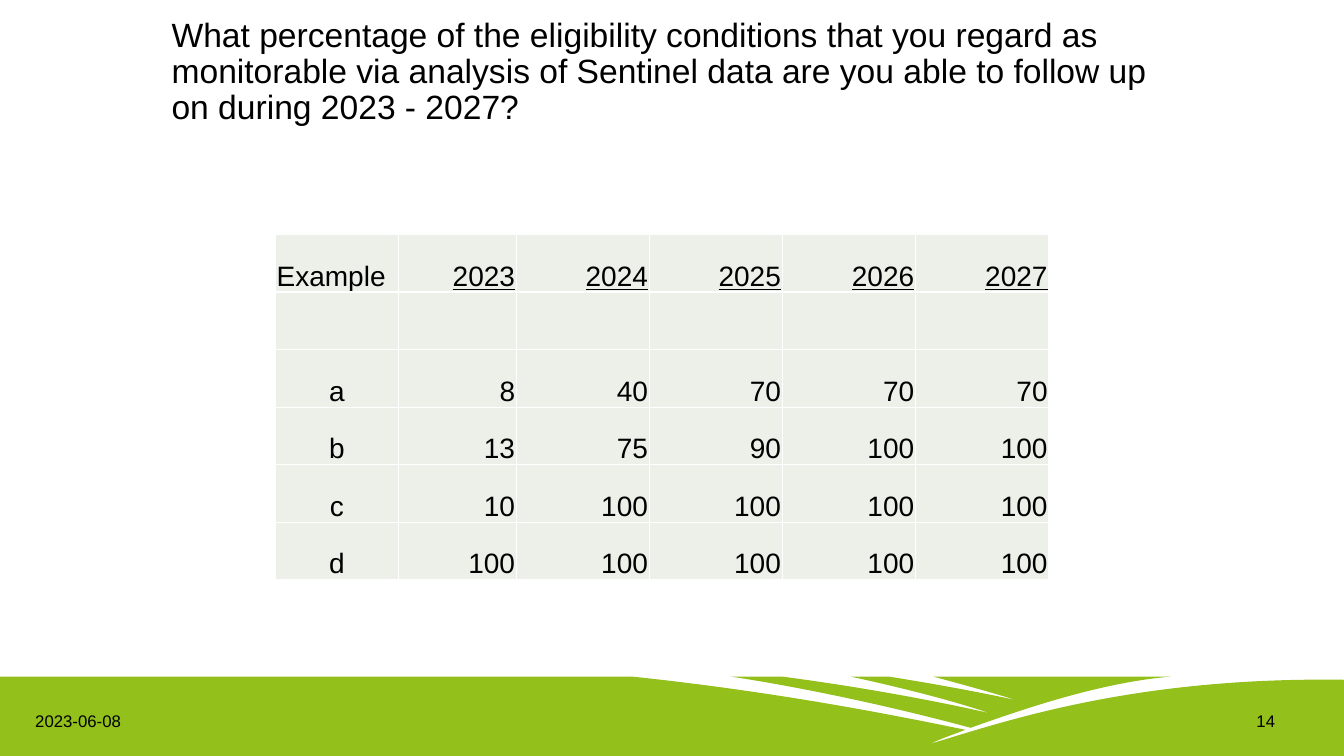
import pptx
import pptx.util
import pptx.dml.color
import pptx.enum.text
import pptx.oxml
import pptx.oxml.ns

Cm = pptx.util.Cm
Pt = pptx.util.Pt
ALIGN = pptx.enum.text.PP_ALIGN
ANCHOR = pptx.enum.text.MSO_ANCHOR
BLACK = pptx.dml.color.RGBColor(0x00, 0x00, 0x00)
GREEN = pptx.dml.color.RGBColor(0x93, 0xC0, 0x1B)
PALE = pptx.dml.color.RGBColor(0xEC, 0xF0, 0xE8)
WHITE = pptx.dml.color.RGBColor(0xFF, 0xFF, 0xFF)

WIDTH, HEIGHT, TOP = 33.87, 19.05, 17.05
FIELD = [
    [(23.52, TOP)],
    [(24.26, 17.25), (24.89, 17.42), (25.63, 17.65)],
    [(25.63, 17.65), (24.41, 17.37), (22.4, TOP)],
    [(21.44, TOP)],
    [(22.58, 17.3), (23.83, 17.6), (24.97, 17.98)],
    [(24.97, 17.98), (22.76, 17.45), (19.71, TOP)],
    [(18.42, TOP)],
    [(20.09, 17.3), (22.4, 17.78), (24.46, 18.34)],
    [(25.76, 17.88), (27.71, 17.2), (29.51, TOP)],
]
HILL = [
    [(24.33, 18.39)],
    [(23.32, 18.19), (20.04, 17.48), (15.93, TOP)],
    [(0, TOP)],
    [(0, HEIGHT)],
    [(WIDTH, HEIGHT)],
    [(WIDTH, 17.13)],
    [(28.43, TOP), (25.17, 18.24), (23.42, 18.75)],
    [(23.9, 18.54), (24, 18.52), (24.33, 18.39)],
]
ROWS = [
    ["Example", "2023", "2024", "2025", "2026", "2027"],
    [""] * 6,
    ["a", "8", "40", "70", "70", "70"],
    ["b", "13", "75", "90", "100", "100"],
    ["c", "10", "100", "100", "100", "100"],
    ["d", "100", "100", "100", "100", "100"],
]
COLS = [3.1, 2.97, 3.35, 3.35, 3.36, 3.36]
ROW = 1.45


def add_run(para, text, size, align, under=None):
    para.alignment = align
    run = para.add_run()
    run.text = text
    run.font.name = "Arial"
    run.font.size = Pt(size)
    run.font.color.rgb = BLACK
    run.font.underline = under


def list_dots(parts):
    return [(Cm(x), Cm(y)) for part in parts for x, y in part]


def bend(shape, parts):
    name = pptx.oxml.ns.qn
    lines = iter(list(shape.element.iter(name("a:lnTo"))))
    for part in parts:
        group = [next(lines) for dot in part]
        if len(group) == 3:
            curve = pptx.oxml.parse_xml(
                f'<a:cubicBezTo {pptx.oxml.ns.nsdecls("a")}/>')
            group[0].addprevious(curve)
            for line in group:
                curve.append(line[0])
                line.getparent().remove(line)


def add_band(slide):
    field, hill = list_dots(FIELD), list_dots(HILL)
    build = slide.shapes.build_freeform(*field[0])
    build.add_line_segments(field[1:])
    build.move_to(*hill[0])
    build.add_line_segments(hill[1:])
    band = build.convert_to_shape()
    bend(band, FIELD[1:] + HILL[1:])
    band.shadow.inherit = False
    band.fill.solid()
    band.fill.fore_color.rgb = GREEN
    band.line.fill.background()


def add_title(slide, text):
    title = slide.shapes.title
    title.element.getparent().append(title.element)
    title.left, title.top = Cm(4.07), Cm(0)
    title.width, title.height = Cm(26.01), Cm(3.33)
    frame = title.text_frame
    frame.vertical_anchor = ANCHOR.BOTTOM
    frame.auto_size = pptx.enum.text.MSO_AUTO_SIZE.NONE
    para = frame.paragraphs[0]
    para.line_spacing = 0.9
    add_run(para, text, 24, ALIGN.LEFT)


def add_label(slide, left, text):
    box = slide.shapes.add_textbox(Cm(left), Cm(17.65), Cm(3.94), Cm(1.02))
    frame = box.text_frame
    frame.word_wrap = True
    frame.vertical_anchor = ANCHOR.MIDDLE
    add_run(frame.paragraphs[0], text, 12, ALIGN.CENTER)


def add_lines(cell):
    props = cell._tc.get_or_add_tcPr()
    for spot, side in enumerate("LRTB"):
        line = pptx.oxml.parse_xml(
            f'<a:ln{side} {pptx.oxml.ns.nsdecls("a")} w="{Pt(1)}"><a:solidFill>'
            f'<a:srgbClr val="{WHITE}"/></a:solidFill></a:ln{side}>')
        props.insert(spot, line)


def fill_cell(cell, text, align, under):
    cell.fill.solid()
    cell.fill.fore_color.rgb = PALE
    add_lines(cell)
    cell.vertical_anchor = ANCHOR.BOTTOM
    cell.margin_left = cell.margin_right = cell.margin_top = Cm(0.03)
    cell.margin_bottom = Cm(0)
    if text:
        add_run(cell.text_frame.paragraphs[0], text, 20, align, under)


def add_grid(slide):
    shape = slide.shapes.add_table(len(ROWS), len(COLS), Cm(6.94), Cm(5.91),
                                   Cm(sum(COLS)), Cm(ROW * len(ROWS)))
    table = shape.table
    table.first_row = False
    table.horz_banding = False
    for col, width in zip(table.columns, COLS):
        col.width = Cm(width)
    for y, texts in enumerate(ROWS):
        table.rows[y].height = Cm(ROW)
        for x, text in enumerate(texts):
            first = ALIGN.CENTER if y else ALIGN.LEFT
            under = True if y == 0 and x else None
            fill_cell(table.cell(y, x), text, ALIGN.RIGHT if x else first, under)


def main():
    deck = pptx.Presentation()
    deck.slide_width, deck.slide_height = Cm(WIDTH), Cm(HEIGHT)
    slide = deck.slides.add_slide(deck.slide_layouts[5])
    add_band(slide)
    add_title(slide, "What percentage of the eligibility conditions that you "
              "regard as monitorable via analysis of Sentinel data are you "
              "able to follow up on during 2023 - 2027?")
    add_label(slide, 0, "2023-06-08")
    add_label(slide, 29.93, "14")
    add_grid(slide)
    deck.save("out.pptx")


if __name__ == "__main__":
    main()
